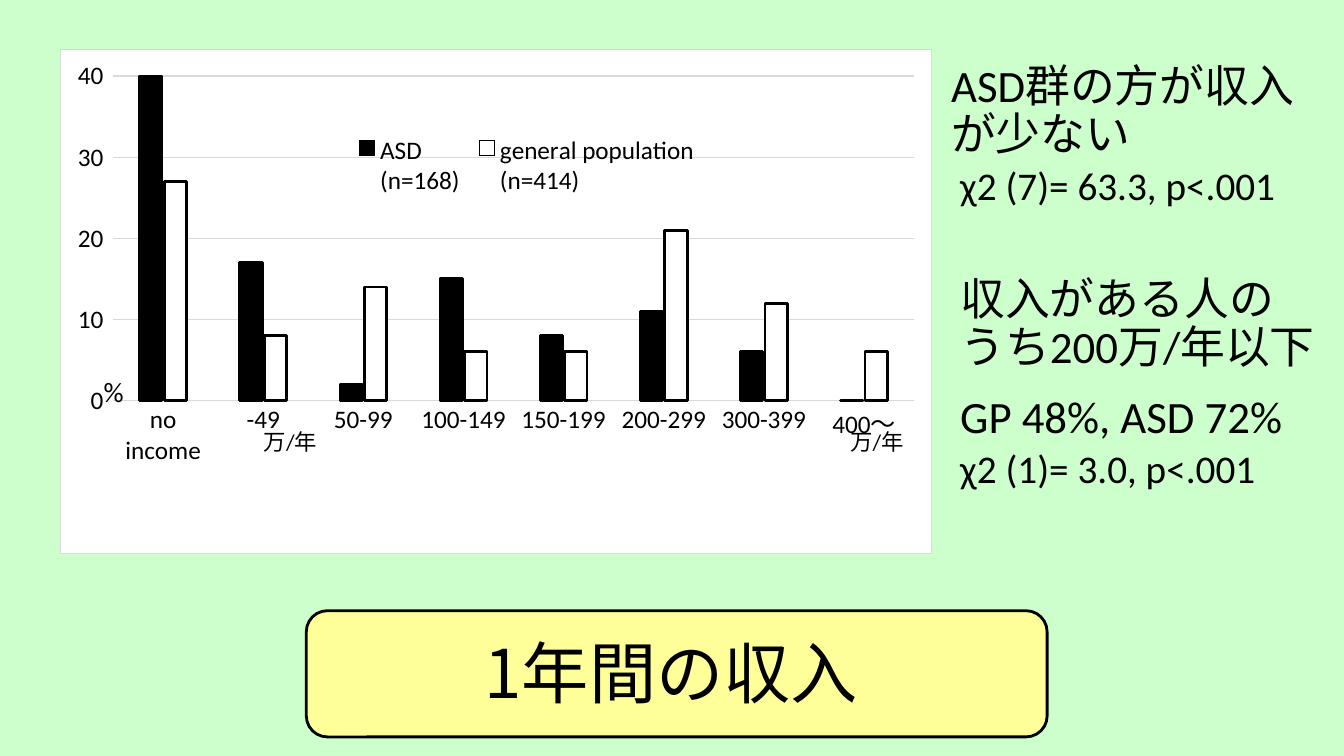
"""Build a slide comparing the yearly income of an ASD group and the general population."""
from dataclasses import dataclass

from lxml import etree
from pptx import Presentation
from pptx.chart.data import CategoryChartData
from pptx.dml.color import RGBColor
from pptx.enum.chart import XL_CHART_TYPE, XL_LEGEND_POSITION, XL_TICK_MARK
from pptx.enum.shapes import MSO_SHAPE
from pptx.enum.text import MSO_ANCHOR, PP_ALIGN
from pptx.oxml import parse_xml
from pptx.oxml.ns import nsdecls, qn
from pptx.util import Cm, Pt

CLUSTERED = XL_CHART_TYPE.COLUMN_CLUSTERED
LEGEND_BOTTOM = XL_LEGEND_POSITION.BOTTOM
NO_TICK = XL_TICK_MARK.NONE
ROUNDED = MSO_SHAPE.ROUNDED_RECTANGLE
BOTTOM = MSO_ANCHOR.BOTTOM
LEFT, CENTER = PP_ALIGN.LEFT, PP_ALIGN.CENTER

COLORS = {"background": "CCFFCC", "banner": "FFFF99", "ink": "000000",
          "paper": "FFFFFF", "grid": "D9D9D9"}
LATIN, JAPANESE = "Calibri", "Noto Sans CJK JP"
INCOME_BANDS = ["no income", "-49", "50-99", "100-149", "150-199",
                "200-299", "300-399", "400～"]


@dataclass
class Label:
    text: str
    left: float
    top: float
    width: float
    height: float
    size: int
    font: str = LATIN
    align: PP_ALIGN = LEFT


@dataclass
class Group:
    name: str
    percentages: list[int]
    color: str


GROUPS = [
    Group("ASD\n(n=168)", [40, 17, 2, 15, 8, 11, 6, 0], "ink"),
    Group("general population\n(n=414)", [27, 8, 14, 6, 6, 21, 12, 6], "paper"),
]
LABELS = [
    Label("1年間の収入", 2.36, 14.91, 29.11, 3.18, 48, JAPANESE, CENTER),
    Label("ASD群の方が収入が少ない", 23.72, 0.99, 9.5, 3.18, 32),
    Label("χ2 (7)= 63.3, p<.001", 23.95, 3.89, 9.5, 1.5, 28),
    Label("収入がある人のうち200万/年以下", 23.95, 6.35, 9.5, 3.18, 32),
    Label("GP 48%, ASD 72%", 23.95, 9.55, 10.64, 1.75, 32),
    Label("χ2 (1)= 3.0, p<.001", 23.95, 11, 11.3, 1.52, 28),
    Label("%", 2.36, 9.02, 1.24, 1.4, 20),
    Label("万/年", 6.4, 11.02, 2.64, 0.58, 16),
    Label("万/年", 21.18, 11.02, 2.64, 0.58, 16),
]


def rgb(name: str) -> RGBColor:
    return RGBColor.from_string(COLORS[name])


def paint(fill, color: str) -> None:
    fill.solid()
    fill.fore_color.rgb = rgb(color)


def stroke(line, color: str, width: float) -> None:
    paint(line.fill, color)
    line.width = Pt(width)


def set_font(font, size: int, name: str = LATIN) -> None:
    font.size = Pt(size)
    font.name = name
    font.color.rgb = rgb("ink")


def add_label(slide, label: Label) -> None:
    box = slide.shapes.add_textbox(Cm(label.left), Cm(label.top),
                                   Cm(label.width), Cm(label.height))
    frame = box.text_frame
    frame.word_wrap = True
    frame.vertical_anchor = BOTTOM
    paragraph = frame.paragraphs[0]
    paragraph.text = label.text
    paragraph.alignment = label.align
    paragraph.line_spacing = 0.9
    set_font(paragraph.font, label.size, label.font)
    defaults = paragraph._p.pPr.find(qn("a:defRPr"))
    etree.SubElement(defaults, qn("a:ea"), typeface=JAPANESE)


def place(part, index: int, inner: bool, x: float, y: float, w: float, h: float) -> None:
    for old in part.findall(qn("c:layout")):
        part.remove(old)
    target = '<c:layoutTarget val="inner"/>' if inner else ""
    part.insert(index, parse_xml(
        f'<c:layout {nsdecls("c")}><c:manualLayout>{target}'
        '<c:xMode val="edge"/><c:yMode val="edge"/>'
        f'<c:x val="{x}"/><c:y val="{y}"/><c:w val="{w}"/><c:h val="{h}"/>'
        '</c:manualLayout></c:layout>'))


def add_income_chart(slide) -> None:
    data = CategoryChartData()
    data.categories = INCOME_BANDS
    for group in GROUPS:
        data.add_series(group.name, group.percentages)
    chart = slide.shapes.add_chart(CLUSTERED, Cm(1.52), Cm(1.24),
                                   Cm(21.97), Cm(12.73), data).chart
    set_font(chart.font, 10)
    chart.has_title = False

    plot = chart.plots[0]
    plot.gap_width, plot.overlap = 239, -10
    plot.vary_by_categories = False
    for series, group in zip(plot.series, GROUPS):
        series.invert_if_negative = False
        paint(series.format.fill, group.color)
        stroke(series.format.line, "ink", 2)

    bands, percent = chart.category_axis, chart.value_axis
    for axis in (bands, percent):
        axis.major_tick_mark = axis.minor_tick_mark = NO_TICK
        set_font(axis.tick_labels.font, 18)
    stroke(bands.format.line, "grid", 0.75)
    percent.format.line.fill.background()
    percent.minimum_scale, percent.maximum_scale = 0, 42
    percent.major_unit = 10
    percent.tick_labels.number_format = r"0_);[Red]\(0\)"
    percent.tick_labels.number_format_is_linked = False
    stroke(percent.major_gridlines.format.line, "grid", 0.75)

    chart.has_legend = True
    legend = chart.legend
    legend.position = LEGEND_BOTTOM
    legend.include_in_layout = False
    set_font(legend.font, 18)

    body = chart._chartSpace.find(qn("c:chart"))
    place(body.find(qn("c:plotArea")), 0, True, 0.06, 0.02, 0.92, 0.676)
    place(body.find(qn("c:legend")), 1, False, 0.33, 0.16, 0.41, 0.14)
    body.addnext(parse_xml(
        f'<c:spPr {nsdecls("c", "a")}>'
        f'<a:solidFill><a:srgbClr val="{COLORS["paper"]}"/></a:solidFill>'
        f'<a:ln w="{Pt(0.75)}"><a:solidFill><a:srgbClr val="{COLORS["grid"]}"/>'
        '</a:solidFill></a:ln></c:spPr>'))


def add_banner(slide) -> None:
    banner = slide.shapes.add_shape(ROUNDED, Cm(7.72), Cm(15.39), Cm(18.67), Cm(3.18))
    banner.shadow.inherit = False
    paint(banner.fill, "banner")
    stroke(banner.line, "ink", 2)


def main() -> None:
    deck = Presentation()
    deck.slide_width, deck.slide_height = Cm(33.87), Cm(19.05)
    slide = deck.slides.add_slide(deck.slide_layouts[6])
    paint(slide.background.fill, "background")
    add_banner(slide)
    add_income_chart(slide)
    for label in LABELS:
        add_label(slide, label)
    deck.save("out.pptx")


if __name__ == "__main__":
    main()
